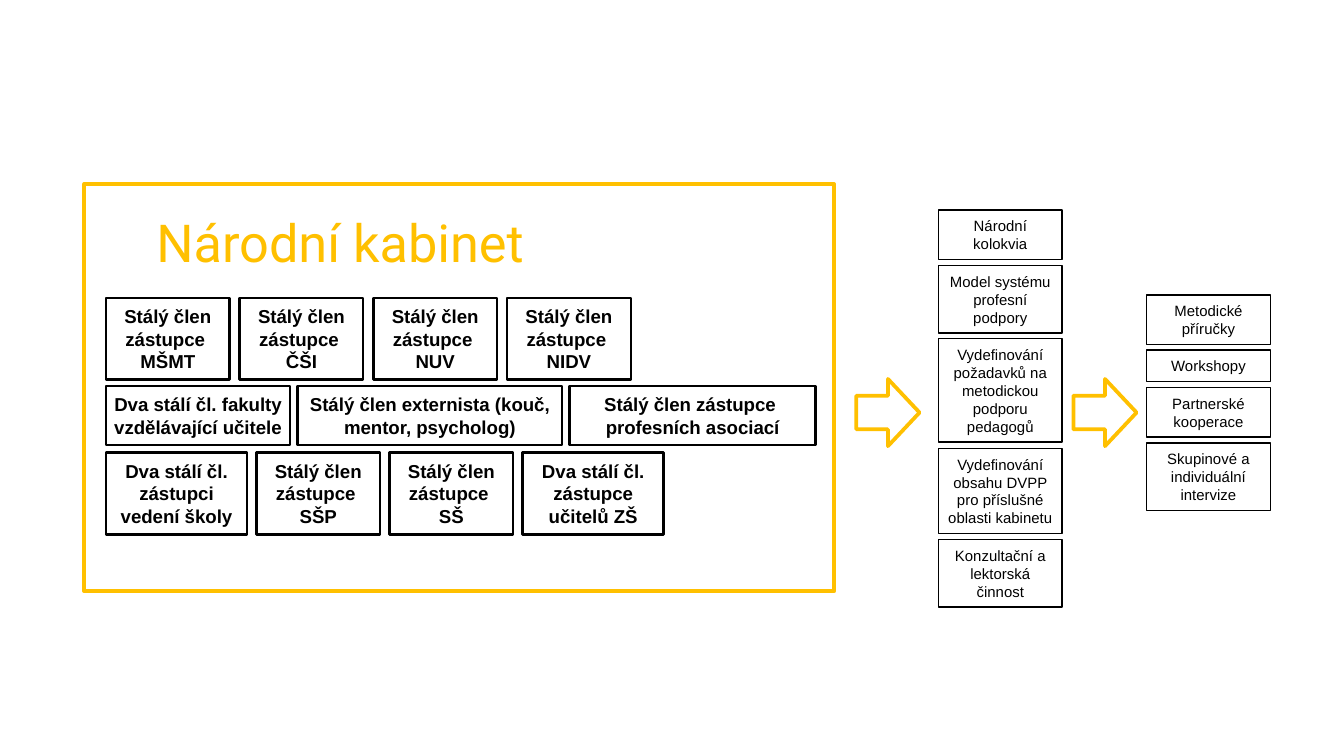
from pptx import Presentation
from pptx.dml.color import RGBColor
from pptx.enum.shapes import MSO_SHAPE
from pptx.enum.text import MSO_ANCHOR, MSO_AUTO_SIZE, PP_ALIGN
from pptx.util import Inches, Pt

COLUMNS = 100
SLIDE_WIDTH = Inches(10)
SLIDE_HEIGHT = SLIDE_WIDTH * 9 // 16
CELL = SLIDE_WIDTH // COLUMNS
BLACK, WHITE, GOLD = "000000", "FFFFFF", "FFC000"

MEMBER_ROWS = [
    (22.15, 6.1, 0.75, [
        (9.2, "Stálý člen\nzástupce \nMŠMT"),
        (9.2, "Stálý člen\nzástupce \nČŠI"),
        (9.2, "Stálý člen\nzástupce \nNUV"),
        (9.2, "Stálý člen\nzástupce \nNIDV"),
    ]),
    (28.72, 4.4, 0.55, [
        (13.7, "Dva stálí čl. fakulty vzdělávající učitele"),
        (19.7, "Stálý člen externista (kouč, mentor, psycholog)"),
        (18.3, "Stálý člen zástupce \nprofesních asociací"),
    ]),
    (33.67, 6.1, 0.7, [
        (10.5, "Dva stálí čl. zástupci vedení školy"),
        (9.2, "Stálý člen\nzástupce \nSŠP"),
        (9.2, "Stálý člen\nzástupce \nSŠ"),
        (10.5, "Dva stálí čl. zástupce učitelů ZŠ"),
    ]),
]

ACTIVITIES = [
    (2, "Národní kolokvia"),
    (3, "Model systému profesní podpory"),
    (5, "Vydefinování požadavků na metodickou podporu pedagogů"),
    (4, "Vydefinování obsahu DVPP pro příslušné oblasti kabinetu"),
    (3, "Konzultační a lektorská činnost"),
]

OUTPUTS = [
    (2, "Metodické příručky"),
    (1, "Workshopy"),
    (2, "Partnerské kooperace"),
    (3, "Skupinové a individuální intervize"),
]


def color(value):
    return RGBColor.from_string(value)


def cells(*counts):
    return [round(count * CELL) for count in counts]


def write(sp, text, size, font="Arial", ink=BLACK, bold=False, anchor=MSO_ANCHOR.MIDDLE):
    tf = sp.text_frame
    tf.word_wrap = True
    tf.auto_size = MSO_AUTO_SIZE.SHAPE_TO_FIT_TEXT
    tf.vertical_anchor = anchor
    tf.margin_left = tf.margin_right = tf.margin_top = tf.margin_bottom = Inches(0.05)
    p = tf.paragraphs[0]
    p.alignment = PP_ALIGN.CENTER
    for i, line in enumerate(text.split("\n")):
        if i:
            p.add_line_break()
        r = p.add_run()
        r.text = line
        r.font.name, r.font.size, r.font.bold = font, Pt(size), bold
        r.font.color.rgb = color(ink)


def add_outline(shapes, kind, at, line, width, fill=WHITE):
    sp = shapes.add_shape(kind, *cells(*at))
    sp.shadow.inherit = False
    if fill:
        sp.fill.solid()
        sp.fill.fore_color.rgb = color(fill)
    else:
        sp.fill.background()
    sp.line.color.rgb = color(line)
    sp.line.width = Pt(width)
    return sp


def add_member_row(s, top, height, gap, members):
    left = 7.88
    for width, text in members:
        sp = add_outline(s.shapes, MSO_SHAPE.RECTANGLE, (left, top, width, height), BLACK, 1.25)
        write(sp, text, 10, bold=True)
        left += width + gap


def add_stack(s, left, top, items):
    group = s.shapes.add_group_shape()
    for lines, text in items:
        height = 1 + 1.34 * lines
        sp = add_outline(group.shapes, MSO_SHAPE.RECTANGLE, (left, top, 9.2, height), BLACK, 0.75)
        write(sp, text, 8)
        top += height + 0.44


def add_title(s, text):
    title = s.shapes.title
    title.left, title.top, title.width, title.height = cells(7.1, 15.15, 36.4, 5.7)
    write(title, text, 28, "Roboto", GOLD, anchor=MSO_ANCHOR.TOP)


def main():
    prs = Presentation()
    prs.slide_width, prs.slide_height = SLIDE_WIDTH, SLIDE_HEIGHT
    s = prs.slides.add_slide(prs.slide_layouts[5])
    add_title(s, "Národní kabinet")
    for row in MEMBER_ROWS:
        add_member_row(s, *row)
    add_outline(s.shapes, MSO_SHAPE.RECTANGLE, (6.27, 13.7, 55.8, 30.3), GOLD, 2, fill=None)
    add_stack(s, 69.83, 15.63, ACTIVITIES)
    add_stack(s, 85.32, 21.94, OUTPUTS)
    for left in (63.72, 79.87):
        add_outline(s.shapes, MSO_SHAPE.RIGHT_ARROW, (left, 28.2, 4.7, 5), GOLD, 2)
    prs.save("out.pptx")


if __name__ == "__main__":
    main()
